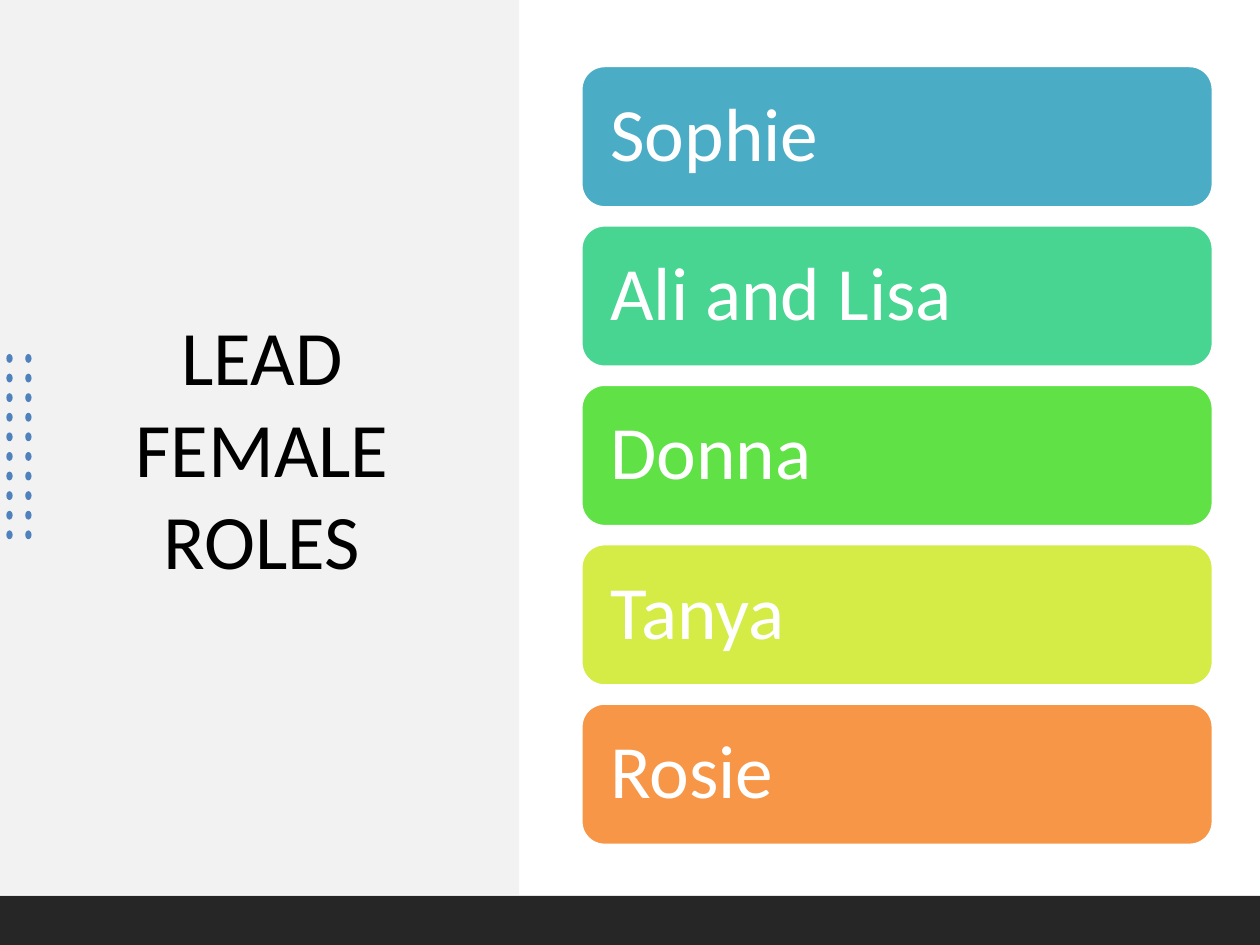
from pptx import Presentation
from pptx.dml.color import RGBColor
from pptx.enum.shapes import MSO_SHAPE as Shape
from pptx.enum.text import MSO_ANCHOR as Anchor, PP_ALIGN as Align
from pptx.util import Inches, Pt

PANEL, BAND, DOT = "F2F2F2", "262626", "4F81BD"
WHITE, BLACK = "FFFFFF", "000000"
ROLES = {
    "Sophie": "4BACC6",
    "Ali and Lisa": "48D491",
    "Donna": "60E146",
    "Tanya": "D5EC46",
    "Rosie": "F79646",
}


def color(value):
    return RGBColor.from_string(value)


class SlideBuilder:
    font = "Calibri"

    def __init__(self, deck):
        self.page = deck.slides.add_slide(deck.slide_layouts[5])

    def add_text(self, frame, text, size, ink, **paragraph_format):
        frame.word_wrap = True
        frame.vertical_anchor = Anchor.MIDDLE
        para = frame.paragraphs[0]
        for name, value in paragraph_format.items():
            setattr(para, name, value)
        span = para.add_run()
        span.text = text
        for name, value in {"name": self.font, "size": Pt(size)}.items():
            setattr(span.font, name, value)
        span.font.color.rgb = color(ink)

    def title(self, text, left, top, width, height):
        box = self.page.shapes.title
        place = {"left": left, "top": top, "width": width, "height": height}
        for name, value in place.items():
            setattr(box, name, Inches(value))
        self.add_text(box.text_frame, text, 44, BLACK, alignment=Align.CENTER)
        return box

    def shape(self, kind, left, top, width, height, fill, parent=None):
        place = [Inches(value) for value in (left, top, width, height)]
        box = (parent or self.page).shapes.add_shape(kind, *place)
        box.shadow.inherit = False
        box.fill.solid()
        box.fill.fore_color.rgb = color(fill)
        box.line.fill.background()
        return box

    def dots(self, left, top, columns, rows, step_x, step_y):
        group = self.page.shapes.add_group_shape()
        for row in range(rows):
            for column in range(columns):
                dot = self.shape(Shape.OVAL, left + column * step_x,
                                 top + row * step_y, 0.07, 0.05, DOT, group)
                dot.rotation = 90

    def cards(self, items, left, top, width, height, step):
        group = self.page.shapes.add_group_shape()
        for index, (text, fill) in enumerate(items.items()):
            card = self.shape(Shape.ROUNDED_RECTANGLE, left, top + index * step,
                              width, height, fill, group)
            card.line.color.rgb = color(WHITE)
            card.line.width = Pt(2)
            frame = card.text_frame
            for side in ("left", "top", "right", "bottom"):
                setattr(frame, f"margin_{side}", Inches(0.18))
            self.add_text(frame, text, 43, WHITE, alignment=Align.LEFT,
                          line_spacing=0.9)


def main():
    deck = Presentation()
    deck.slide_width, deck.slide_height = Inches(10), Inches(7.5)
    slide = SlideBuilder(deck)

    # Left panel, placed behind the title
    panel = slide.shape(Shape.RECTANGLE, 0, 0, 4.12, 7.1, PANEL)
    title = slide.title("LEAD FEMALE ROLES", 0.49, 1.32, 3.18, 4.45)
    title.element.addprevious(panel.element)

    # Dot grid and bottom band
    slide.dots(0.04, 2.82, columns=2, rows=10, step_x=0.15, step_y=1.4 / 9)
    slide.shape(Shape.RECTANGLE, 0, 7.11, 10, 0.39, BAND)

    # One card for each role
    slide.cards(ROLES, 4.61, 0.52, 5.02, 1.13, step=5.06 / 4)

    deck.save("out.pptx")


if __name__ == "__main__":
    main()
